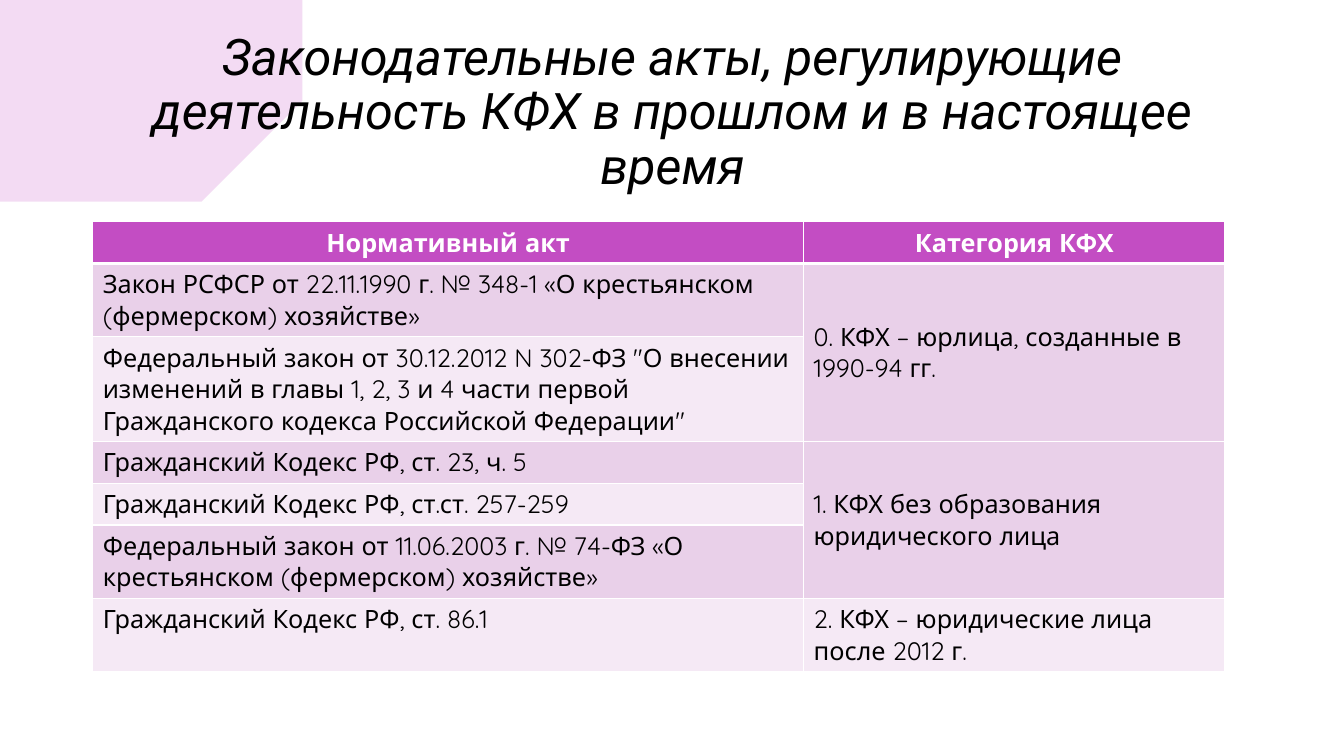
"""Build a slide listing the legislation that governs farm enterprises."""
from dataclasses import dataclass

from lxml.etree import SubElement
from pptx import Presentation
from pptx.dml.color import RGBColor
from pptx.enum.text import MSO_ANCHOR, MSO_AUTO_SIZE, PP_ALIGN
from pptx.oxml.ns import qn
from pptx.slide import Slide
from pptx.table import _Cell
from pptx.util import Inches, Pt

WHITE = RGBColor(0xFF, 0xFF, 0xFF)
BLACK = RGBColor(0x00, 0x00, 0x00)
ORCHID = RGBColor(0xC3, 0x4D, 0xC3)
LILAC = RGBColor(0xE9, 0xD0, 0xE9)
PALE_LILAC = RGBColor(0xF5, 0xE9, 0xF5)

TITLE = "Законодательные акты, регулирующие деятельность КФХ в прошлом и в настоящее время"
HEADINGS = ("Нормативный акт", "Категория КФХ")
COLUMN_WIDTHS = (7.05, 4.18)
ROW_HEIGHT = 0.41

BRUSH_OUTLINE = (
    (0, 0.34), (0.06, 0.35), (0.25, 0.37), (0.66, 0.38), (1.02, 0.37), (1.51, 0.38),
    (1.94, 0.41), (2.48, 0.41), (2.66, 0.41), (2.8, 0.47), (2.71, 0.49), (2.55, 0.54),
    (2.53, 0.57), (2.56, 0.59), (2.62, 0.62), (2.46, 0.62), (2.38, 0.66), (2.46, 0.68),
    (2.56, 0.7), (2.66, 0.71), (2.75, 0.74), (2.51, 0.75), (2.63, 0.78), (2.73, 0.81),
    (2.8, 0.82), (2.88, 0.83), (2.9, 0.85), (2.87, 0.88), (2.84, 0.88), (2.63, 0.88),
    (2.96, 0.92), (3.3, 0.94), (3.21, 0.97), (3.18, 1.06), (3.07, 1.11), (3, 1.13),
    (2.83, 1.16), (2.8, 1.2), (2.78, 1.25), (2.74, 1.28), (3.08, 1.28), (2.88, 1.33),
    (2.69, 1.38), (2.73, 1.42), (2.62, 1.44), (2.52, 1.48), (2.63, 1.48), (2.34, 1.61),
    (1.97, 1.72), (1.5, 1.81), (1.02, 1.88), (0.65, 1.91), (0.23, 1.9), (0.07, 1.89),
    (0, 1.88),
)


@dataclass(frozen=True)
class Category:
    """A kind of farm enterprise and the acts that govern it."""

    name: str
    acts: tuple[str, ...]


CATEGORIES = (
    Category("0. КФХ – юрлица, созданные в 1990-94 гг.", (
        "Закон РСФСР от 22.11.1990 г. № 348-1 «О крестьянском (фермерском) хозяйстве»",
        "Федеральный закон от 30.12.2012 N 302-ФЗ \"О внесении изменений в главы 1, 2, 3 и 4 "
        "части первой Гражданского кодекса Российской Федерации\"",
    )),
    Category("1. КФХ без образования юридического лица", (
        "Гражданский Кодекс РФ, ст. 23, ч. 5",
        "Гражданский Кодекс РФ, ст.ст. 257-259",
        "Федеральный закон от 11.06.2003 г. № 74-ФЗ «О крестьянском (фермерском) хозяйстве»",
    )),
    Category("2. КФХ – юридические лица после 2012 г.", ("Гражданский Кодекс РФ, ст. 86.1",)),
)


def add_brush_stroke(slide: Slide) -> None:
    """Draw the translucent brush stroke behind everything else."""
    builder = slide.shapes.build_freeform(*BRUSH_OUTLINE[0], scale=Inches(1))
    builder.add_line_segments(BRUSH_OUTLINE[1:], close=True)
    stroke = builder.convert_to_shape()
    stroke.shadow.inherit = False
    stroke.line.fill.background()
    stroke.fill.solid()
    stroke.fill.fore_color.rgb = ORCHID
    color = stroke._element.spPr.find(qn("a:solidFill")).find(qn("a:srgbClr"))
    SubElement(color, qn("a:alpha"), val="20000")
    slide.shapes._spTree.insert(2, stroke._element)


def format_title(slide: Slide) -> None:
    """Place and style the title."""
    title = slide.shapes.title
    title.left, title.top = Inches(0.92), Inches(0.4)
    title.width, title.height = Inches(11.5), Inches(1.45)
    frame = title.text_frame
    frame.text = TITLE
    frame.word_wrap = True
    frame.auto_size = MSO_AUTO_SIZE.NONE
    frame.vertical_anchor = MSO_ANCHOR.MIDDLE
    paragraph = frame.paragraphs[0]
    paragraph.alignment = PP_ALIGN.CENTER
    paragraph.line_spacing = 0.9
    font = paragraph.font
    font.name, font.size, font.italic = "Roboto", Pt(36), True
    font.color.rgb = BLACK


def style_cell(cell: _Cell, row: int) -> None:
    """Apply the fill and white borders that belong to a row."""
    properties = cell._tc.get_or_add_tcPr()
    widths = {"L": 1, "R": 1, "T": 3 if row == 1 else 1, "B": 3 if row == 0 else 1}
    for side, width in widths.items():
        border = SubElement(properties, qn(f"a:ln{side}"), w=str(Pt(width)))
        SubElement(SubElement(border, qn("a:solidFill")), qn("a:srgbClr"), val=str(WHITE))
    cell.fill.solid()
    cell.fill.fore_color.rgb = ORCHID if row == 0 else LILAC if row % 2 else PALE_LILAC


def write_cell(cell: _Cell, text: str, heading: bool = False) -> None:
    """Write the text of a heading or body cell."""
    cell.text = text
    paragraph = cell.text_frame.paragraphs[0]
    paragraph.alignment = PP_ALIGN.CENTER if heading else PP_ALIGN.LEFT
    font = paragraph.font
    font.name, font.size, font.bold = "Quicksand", Pt(18), heading
    font.color.rgb = WHITE if heading else BLACK


def add_acts_table(slide: Slide) -> None:
    """Add the table of acts grouped by category."""
    row_count = 1 + sum(len(category.acts) for category in CATEGORIES)
    frame = slide.shapes.add_table(
        row_count, len(HEADINGS), Inches(0.92), Inches(2.2),
        Inches(sum(COLUMN_WIDTHS)), Inches(ROW_HEIGHT * row_count))
    table = frame.table
    for column, width in zip(table.columns, COLUMN_WIDTHS):
        column.width = Inches(width)
    for index, row in enumerate(table.rows):
        row.height = Inches(ROW_HEIGHT)
        for cell in row.cells:
            style_cell(cell, index)
    for index, heading in enumerate(HEADINGS):
        write_cell(table.cell(0, index), heading, heading=True)

    first = 1
    for category in CATEGORIES:
        last = first + len(category.acts) - 1
        for index, act in enumerate(category.acts, first):
            write_cell(table.cell(index, 0), act)
        category_cell = table.cell(first, 1)
        if last > first:
            category_cell.merge(table.cell(last, 1))
        write_cell(category_cell, category.name)
        category_cell.vertical_anchor = MSO_ANCHOR.MIDDLE
        first = last + 1
    frame.height = Inches(4.32)


def main() -> None:
    """Create the presentation and save it."""
    presentation = Presentation()
    presentation.slide_width, presentation.slide_height = Inches(13.33), Inches(7.5)
    slide = presentation.slides.add_slide(presentation.slide_layouts[5])
    add_brush_stroke(slide)
    format_title(slide)
    add_acts_table(slide)
    presentation.save("out.pptx")


if __name__ == "__main__":
    main()
